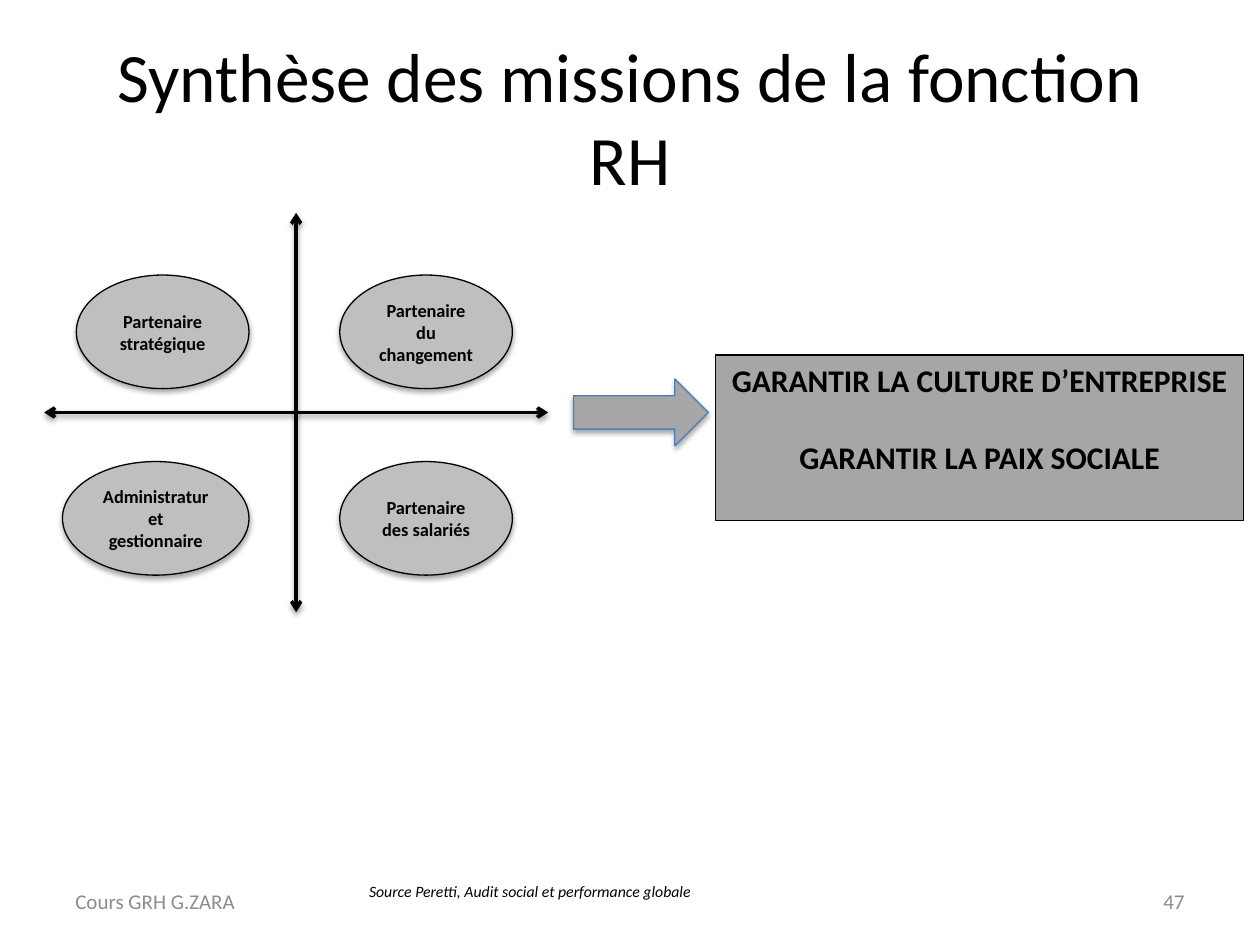
from lxml import etree
from pptx import Presentation
from pptx.dml.color import RGBColor
from pptx.enum.shapes import MSO_CONNECTOR, MSO_SHAPE
from pptx.enum.text import MSO_ANCHOR, PP_ALIGN
from pptx.oxml.ns import qn
from pptx.util import Cm, Pt

STRAIGHT = MSO_CONNECTOR.STRAIGHT
OVAL, RECTANGLE, RIGHT_ARROW = MSO_SHAPE.OVAL, MSO_SHAPE.RECTANGLE, MSO_SHAPE.RIGHT_ARROW
TOP, MIDDLE = MSO_ANCHOR.TOP, MSO_ANCHOR.MIDDLE
LEFT, CENTER, RIGHT = PP_ALIGN.LEFT, PP_ALIGN.CENTER, PP_ALIGN.RIGHT

FONT = "Calibri"
COLORS = {
    "black": "000000",
    "oval": "BFBFBF",
    "panel": "A6A6A6",
    "arrow_line": "4B7EBC",
    "footer": "8C8C8C",
}


def color(name):
    return RGBColor.from_string(COLORS[name])


def add_shadow(shape, opacity, distance):
    effects = etree.SubElement(shape._element.spPr, qn("a:effectLst"))
    shadow = etree.SubElement(
        effects, qn("a:outerShdw"), blurRad=str(Pt(3.1)), dist=str(Pt(distance)),
        dir="5400000", rotWithShape="0")
    shade = etree.SubElement(shadow, qn("a:srgbClr"), val=COLORS["black"])
    etree.SubElement(shade, qn("a:alpha"), val=str(opacity * 1000))


def write(shape, lines, size, align=CENTER, anchor=MIDDLE, wrap=True,
          ink="black", bold=False, italic=False, gap=0):
    frame = shape.text_frame
    frame.word_wrap = wrap
    frame.vertical_anchor = anchor
    for index, line in enumerate(lines):
        paragraph = frame.add_paragraph() if index else frame.paragraphs[0]
        paragraph.alignment = align
        if index:
            paragraph.space_before = Pt(gap)
        run = paragraph.add_run()
        run.text = line
        font = run.font
        font.name, font.size, font.bold, font.italic = FONT, Pt(size), bold, italic
        font.color.rgb = color(ink)


def add_filled(shapes, kind, box, fill, line="black", shadowed=True):
    shape = shapes.add_shape(kind, *map(Cm, box))
    shape.fill.solid()
    shape.fill.fore_color.rgb = color(fill)
    shape.line.color.rgb = color(line)
    shape.line.width = Pt(0.75)
    if shadowed:
        add_shadow(shape, 35, 1.8)
    else:
        shape.shadow.inherit = False
    return shape


def add_axis(shapes, start, end):
    axis = shapes.add_connector(STRAIGHT, *map(Cm, start + end))
    axis.line.color.rgb = color("black")
    axis.line.width = Pt(2)
    line = axis.line._get_or_add_ln()
    for tag in ("a:headEnd", "a:tailEnd"):
        etree.SubElement(line, qn(tag), type="arrow")
    add_shadow(axis, 38, 1.6)


def build_title(slide, box):
    title = slide.shapes.title
    title.left, title.top, title.width, title.height = map(Cm, box)
    write(title, ["Synthèse des missions de la fonction RH"], 39.6)


def build_quadrants(slide, box):
    left, top, width, height = box
    middle_x, middle_y = left + width / 2, top + height / 2
    shapes = slide.shapes.add_group_shape().shapes
    add_axis(shapes, (middle_x, top), (middle_x, top + height))
    add_axis(shapes, (left, middle_y), (left + width, middle_y))

    oval_height = 2.29
    upper, lower = middle_y - 0.48 - oval_height, middle_y + 0.99
    roles = [
        ("Partenaire du changement", True, upper, 3.48),
        ("Partenaire des salariés", True, lower, 3.48),
        ("Partenaire stratégique", False, upper, 3.48),
        ("Administratur et gestionnaire", False, lower, 3.76),
    ]
    for role, on_right, oval_top, oval_width in roles:
        oval_left = middle_x + 0.88 if on_right else middle_x - 0.95 - oval_width
        oval = add_filled(shapes, OVAL, (oval_left, oval_top, oval_width, oval_height), "oval")
        write(oval, [role], 10.5, bold=True)


def build_outcome(slide, box):
    left, top, width, height = box
    add_filled(slide.shapes, RIGHT_ARROW, (left, top + 0.48, 2.72, 1.35), "panel", "arrow_line")
    panel = add_filled(slide.shapes, RECTANGLE, (left + 2.87, top, width - 2.87, height),
                       "panel", shadowed=False)
    write(panel, ["GARANTIR LA CULTURE D’ENTREPRISE", "GARANTIR LA PAIX SOCIALE"], 18,
          anchor=TOP, wrap=False, bold=True, gap=22)


def build_footer(slide, box):
    left, top, width, height = box
    side = 5.92
    source = slide.shapes.add_textbox(*map(Cm, (left + side, top, 7.14, 0.64)))
    write(source, ["Source Peretti, Audit social et performance globale"], 9,
          align=LEFT, anchor=TOP, wrap=False, italic=True)
    for text, text_left, align in (("Cours GRH G.ZARA", left, LEFT),
                                   ("47", left + width - side, RIGHT)):
        label = slide.shapes.add_textbox(*map(Cm, (text_left, top, side, height)))
        write(label, [text], 12, align=align, ink="footer")


def main():
    presentation = Presentation()
    presentation.slide_width, presentation.slide_height = Cm(25.4), Cm(19.05)
    slide = presentation.slides.add_slide(presentation.slide_layouts[5])
    build_title(slide, (1.27, 0.76, 22.86, 3.18))
    build_quadrants(slide, (0.89, 4.29, 10.16, 8.05))
    build_outcome(slide, (11.56, 7.16, 13.51, 3.33))
    build_footer(slide, (1.27, 17.65, 22.86, 1.02))
    presentation.save("out.pptx")


if __name__ == "__main__":
    main()
